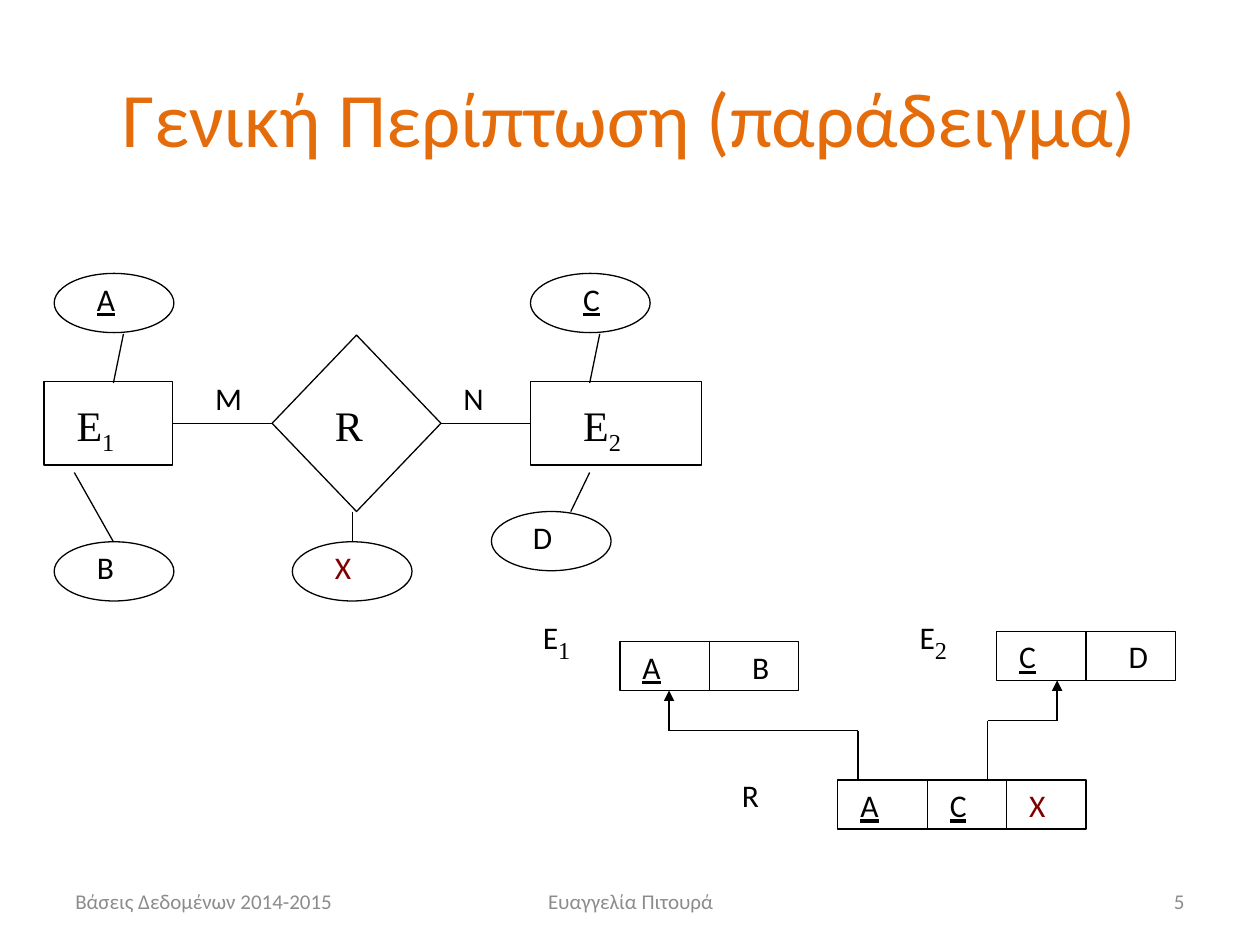
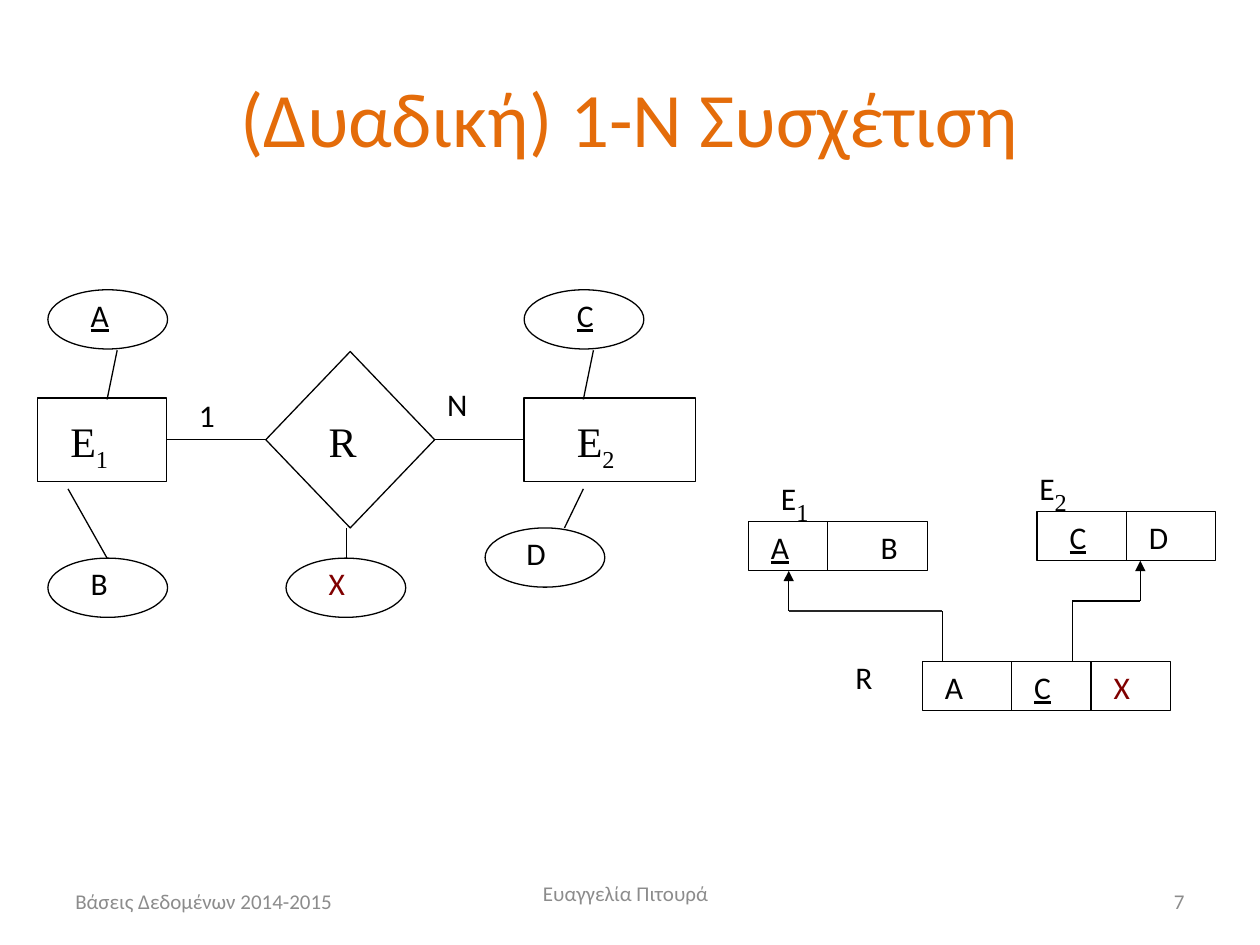
from dataclasses import dataclass

import pptx
import pptx.dml.color
import pptx.enum.shapes
import pptx.enum.text
import pptx.oxml.ns
import pptx.util
from lxml import etree
from pptx.util import Inches

COLORS = {"ink": "000000", "bend": "262626", "title": "E46C0A",
          "footer": "8C8C8C", "relationship": "800000"}
SANS, SERIF = "Calibri", "Times New Roman"
SHAPES = pptx.enum.shapes.MSO_SHAPE
ALIGN = pptx.enum.text.PP_ALIGN
ANCHOR = pptx.enum.text.MSO_ANCHOR

ROW_HEIGHT = 0.39
BEND_GAP = 0.32
KEY_STARTS = (0.16, 1.19)
OVAL = (0.95, 0.47)
ENTITY_TOP, ENTITY_HEIGHT = 3.03, 0.66

Point = tuple[float, float]


@dataclass(frozen=True)
class Attribute:
    name: str
    left: float
    top: float
    text_left: float
    text_width: float
    key: bool = False
    color: str = "ink"


@dataclass(frozen=True)
class Entity:
    index: str
    left: float
    width: float
    text_left: float
    text_width: float


@dataclass(frozen=True)
class Column:
    name: str
    width: float
    pad: float = 0.08
    text_width: float = 0.71
    key: bool = False
    color: str = "ink"


@dataclass(frozen=True)
class Relation:
    name: str
    name_at: Point
    left: float
    top: float
    columns: tuple[Column, ...]
    index: str = ""


@dataclass(frozen=True)
class ForeignKey:
    target: Relation
    offset: float
    bend_color: str = "ink"


@dataclass(frozen=True)
class Cardinality:
    name: str
    left: float
    top: float
    width: float


@dataclass(frozen=True)
class Page:
    title: str
    number: str
    author_box: tuple[float, float, float, float]
    shift: Point
    cardinalities: tuple[Cardinality, ...]
    relationship: Relation
    keys: tuple[ForeignKey, ...]


ATTRIBUTES = (
    Attribute("A", 0.43, 2.17, 0.67, 0.79, key=True),
    Attribute("B", 0.43, 4.3, 0.67, 0.55),
    Attribute("C", 4.21, 2.17, 4.53, 0.71, key=True),
    Attribute("D", 3.9, 4.06, 4.13, 0.71),
    Attribute("X", 2.32, 4.3, 2.56, 0.63, color="relationship"),
)
ENTITIES = (Entity("1", 0.35, 1.02, 0.51, 0.94), Entity("2", 4.21, 1.36, 4.53, 1.1))
ATTRIBUTE_LINKS = (
    ((0.98, 2.65), (0.9, 3.04)),
    ((0.59, 3.75), (0.9, 4.3)),
    ((4.76, 2.65), (4.68, 3.04)),
    ((4.68, 3.75), (4.53, 4.06)),
    ((2.8, 4.06), (2.8, 4.3)),
)


def relationship_columns(first_is_key: bool) -> tuple[Column, ...]:
    return (Column("A", 0.71, text_width=0.55, key=first_is_key),
            Column("C", 0.63, key=True),
            Column("X", 0.63, text_width=0.47, color="relationship"))


PAGES = (
    Page("Γενική Περίπτωση (παράδειγμα)", "5", (3.42, 6.95, 3.17, 0.4), (0, 0),
         (Cardinality("M", 1.61, 2.96, 0.39), Cardinality("N", 3.58, 2.96, 0.55)),
         Relation("R", (5.79, 6.11), 6.65, 6.19, relationship_columns(True)),
         (ForeignKey(Relation("E", (4.21, 4.77), 4.92, 5.09,
                              (Column("A", 0.71, text_width=0.55, key=True),
                               Column("B", 0.71, 0.24)), "1"), 0.39),
          ForeignKey(Relation("E", (7.2, 4.77), 7.91, 5.01,
                              (Column("C", 0.71, text_width=0.55, key=True),
                               Column("D", 0.71, 0.24)), "2"), 0.48))),
    Page("(Δυαδική) 1-Ν Συσχέτιση", "7", (3.35, 6.98, 3.23, 0.22), (-0.05, 0.13),
         (Cardinality("1", 1.48, 3.09, 0.63), Cardinality("N", 3.45, 3.01, 0.47)),
         Relation("R", (6.69, 5.17), 7.32, 5.25, relationship_columns(False)),
         (ForeignKey(Relation("E", (6.1, 3.67), 5.94, 4.14,
                              (Column("A", 0.63, text_width=0.55, key=True),
                               Column("B", 0.79, 0.32)), "1"), 0.32, "bend"),
          ForeignKey(Relation("E", (8.15, 3.59), 8.23, 4.06,
                              (Column("C", 0.71, 0.16, 0.55, key=True),
                               Column("D", 0.71)), "2"), 0.82))),
)


def rgb(name: str) -> pptx.dml.color.RGBColor:
    return pptx.dml.color.RGBColor.from_string(COLORS[name])


def add_text(slide, text: str, left: float, top: float, width: float, height: float = 0.4, *,
             size: float = 18, font: str = SANS, color: str = "ink", underline: bool = False,
             subscript: str = "", align=ALIGN.LEFT, anchor=ANCHOR.TOP) -> None:
    box = slide.shapes.add_textbox(Inches(left), Inches(top), Inches(width), Inches(height))
    frame = box.text_frame
    frame.word_wrap = True
    frame.vertical_anchor = anchor
    paragraph = frame.paragraphs[0]
    paragraph.alignment = align
    pieces = [(text, size, font)]
    if subscript:
        pieces.append((subscript, 24, SERIF))
    for content, points, face in pieces:
        run = paragraph.add_run()
        run.text = content
        run.font.size = pptx.util.Pt(points)
        run.font.name = face
        run.font.color.rgb = rgb(color)
        if underline:
            run.font.underline = True
    if subscript:
        run.font._element.set("baseline", "-25000")


def add_outline(slide, kind, left: float, top: float, width: float, height: float):
    shape = slide.shapes.add_shape(kind, Inches(left), Inches(top), Inches(width), Inches(height))
    shape.shadow.inherit = False
    shape.fill.background()
    shape.line.color.rgb = rgb("ink")
    shape.line.width = pptx.util.Pt(0.75)
    return shape


def add_line(slide, start: Point, end: Point, color: str = "ink", arrow: bool = False):
    line = slide.shapes.add_connector(
        pptx.enum.shapes.MSO_CONNECTOR.STRAIGHT, *(Inches(v) for v in (*start, *end)))
    line.line.color.rgb = rgb(color)
    line.line.width = pptx.util.Pt(0.75)
    qn = pptx.oxml.ns.qn
    if arrow:
        etree.SubElement(line.line._get_or_add_ln(), qn("a:tailEnd"), type="triangle")
    etree.SubElement(line._element.spPr, qn("a:effectLst"))
    return line


def draw_frame(slide, page: Page) -> None:
    add_text(slide, page.title, 0.5, 0.3, 9, 1.25, size=44, color="title",
             align=ALIGN.CENTER, anchor=ANCHOR.MIDDLE)
    for text, box, align in (
        ("Βάσεις Δεδομένων 2014-2015", (0.5, 6.95, 2.33, 0.4), ALIGN.LEFT),
        ("Ευαγγελία Πιτουρά", page.author_box, ALIGN.CENTER),
        (page.number, (7.17, 6.95, 2.33, 0.4), ALIGN.RIGHT),
    ):
        add_text(slide, text, *box, size=12, color="footer", align=align, anchor=ANCHOR.MIDDLE)


def draw_entity_diagram(slide, page: Page) -> None:
    dx, dy = page.shift
    entity_shapes = []
    for entity in ENTITIES:
        entity_shapes.append(add_outline(slide, SHAPES.FLOWCHART_PROCESS, entity.left + dx,
                                         ENTITY_TOP + dy, entity.width, ENTITY_HEIGHT))
        add_text(slide, "E", entity.text_left + dx, 3.12 + dy, entity.text_width, 0.5,
                 size=24, font=SERIF, subscript=entity.index)
    diamond = add_outline(slide, SHAPES.FLOWCHART_DECISION, 2.16 + dx, 2.66 + dy, 1.34, 1.4)
    add_text(slide, "R", 2.56 + dx, 3.12 + dy, 1.42, 0.5, size=24, font=SERIF)

    middle = ENTITY_TOP + ENTITY_HEIGHT / 2 + dy
    for left, right, x1, x2 in ((entity_shapes[0], diamond, 1.37, 2.16),
                                (diamond, entity_shapes[1], 3.5, 4.21)):
        link = add_line(slide, (x1 + dx, middle), (x2 + dx, middle))
        link.begin_connect(left, 3)
        link.end_connect(right, 1)

    for attribute in ATTRIBUTES:
        add_outline(slide, SHAPES.OVAL, attribute.left + dx, attribute.top + dy, *OVAL)
        add_text(slide, attribute.name, attribute.text_left + dx, attribute.top + dy,
                 attribute.text_width, color=attribute.color, underline=attribute.key)
    for (x1, y1), (x2, y2) in ATTRIBUTE_LINKS:
        add_line(slide, (x1 + dx, y1 + dy), (x2 + dx, y2 + dy))
    for cardinality in page.cardinalities:
        add_text(slide, cardinality.name, cardinality.left, cardinality.top, cardinality.width)


def draw_relation(slide, relation: Relation) -> None:
    top = relation.top
    add_text(slide, relation.name, *relation.name_at, 1.1, subscript=relation.index)
    add_outline(slide, SHAPES.RECTANGLE, relation.left, top,
                sum(column.width for column in relation.columns), ROW_HEIGHT)
    x = relation.left
    for column in relation.columns:
        if x > relation.left:
            add_line(slide, (x, top), (x, top + ROW_HEIGHT))
        add_text(slide, column.name, x + column.pad, top, column.text_width,
                 color=column.color, underline=column.key)
        x += column.width


def draw_foreign_key(slide, source: Relation, start: float, key: ForeignKey) -> None:
    start_x = source.left + start
    end_x = key.target.left + key.offset
    bottom = key.target.top + ROW_HEIGHT
    bend = bottom + BEND_GAP
    add_line(slide, (start_x, source.top), (start_x, bend))
    add_line(slide, (start_x, bend), (end_x, bend), color=key.bend_color)
    add_line(slide, (end_x, bend), (end_x, bottom), arrow=True)


def main() -> None:
    deck = pptx.Presentation()
    deck.slide_width, deck.slide_height = Inches(10), Inches(7.5)
    for page in PAGES:
        slide = deck.slides.add_slide(deck.slide_layouts[6])
        draw_frame(slide, page)
        draw_entity_diagram(slide, page)
        draw_relation(slide, page.relationship)
        for start, key in zip(KEY_STARTS, page.keys):
            draw_relation(slide, key.target)
            draw_foreign_key(slide, page.relationship, start, key)
    deck.save("out.pptx")


if __name__ == "__main__":
    main()
